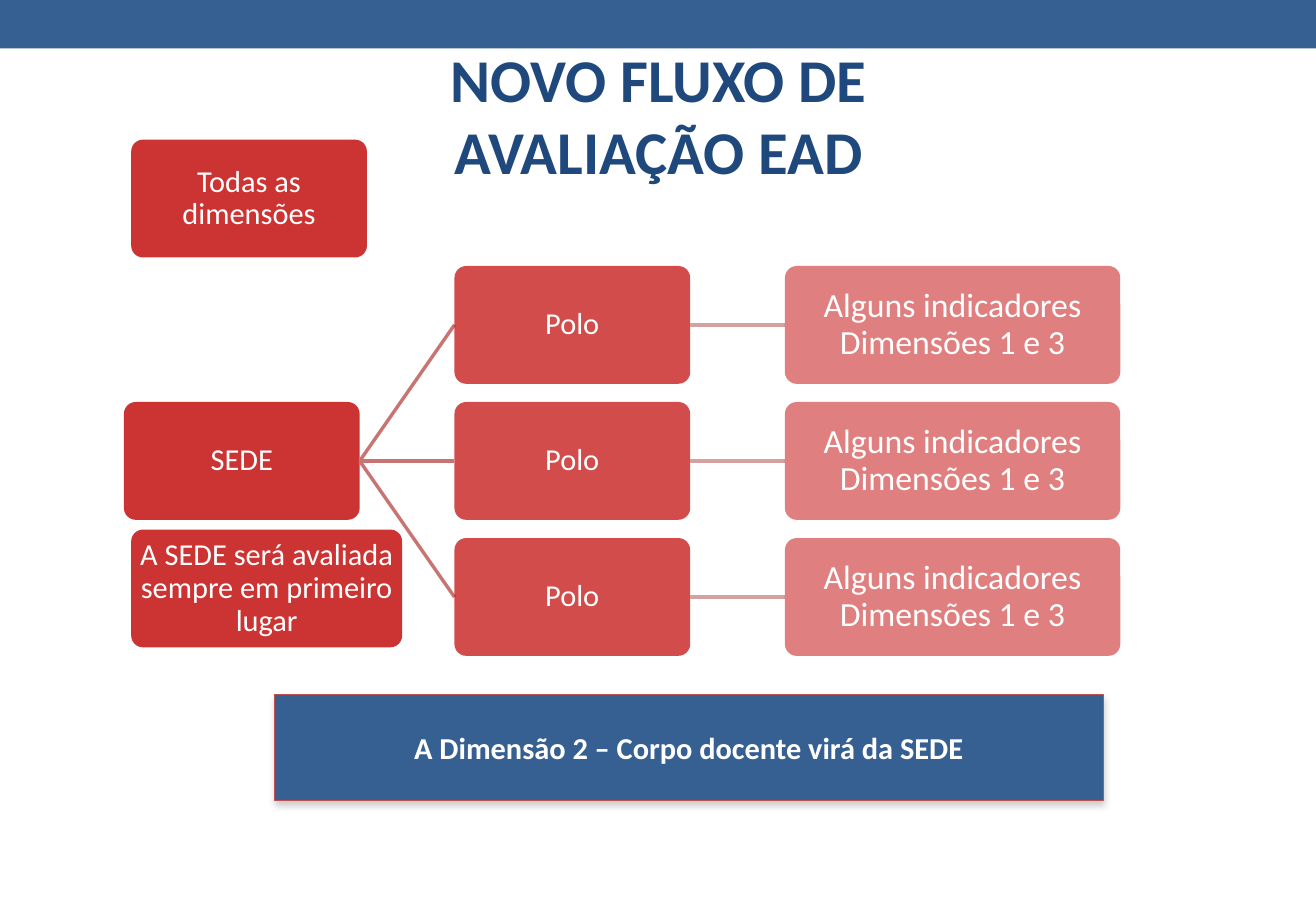
from lxml import etree
from pptx import Presentation
from pptx import util as u
from pptx.dml.color import RGBColor
from pptx.enum import shapes, text
from pptx.oxml.ns import qn

BLUE = RGBColor(0x37, 0x60, 0x92)
NAVY = RGBColor(0x1F, 0x49, 0x7D)
RED = RGBColor(0xC0, 0x00, 0x00)
EDGE = RGBColor(0xC0, 0x50, 0x4D)
ROSE = RGBColor(0xC7, 0x74, 0x72)
PINK = RGBColor(0xD5, 0xA1, 0xA0)
WHITE = RGBColor(0xFF, 0xFF, 0xFF)

HIGH = 0.97               # height of every red box
WIDE = 1.94               # width of the SEDE and Polo boxes
ROWS = [2.19 + 1.12 * i for i in range(3)]
SEDE, POLO, NOTE = 1.02, 3.74, 6.46   # left edges of the columns


def write(shape, words, size=18, bold=False, color=WHITE, space=None,
          inset=None, anchor=text.MSO_ANCHOR.MIDDLE):
    frame = shape.text_frame
    frame.word_wrap = True
    frame.auto_size = text.MSO_AUTO_SIZE.NONE
    frame.vertical_anchor = anchor
    if inset is not None:
        frame.margin_left = frame.margin_right = u.Inches(inset)
        frame.margin_top = frame.margin_bottom = u.Inches(inset)
    para = frame.paragraphs[0]
    para.text = words
    para.alignment = text.PP_ALIGN.CENTER
    if space:
        para.line_spacing = space
    font = para.font
    font.name, font.size, font.bold = "Calibri", u.Pt(size), bold
    font.color.rgb = color


def block(slide, kind, left, top, width, height, color):
    shape = slide.shapes.add_shape(kind, u.Inches(left), u.Inches(top),
                                   u.Inches(width), u.Inches(height))
    shape.shadow.inherit = False
    shape.fill.solid()
    shape.fill.fore_color.rgb = color
    shape.line.fill.background()
    return shape


def card(slide, words, left, top, width=WIDE, alpha=80, size=18):
    shape = block(slide, shapes.MSO_SHAPE.ROUNDED_RECTANGLE,
                  left, top, width, HIGH, RED)
    shape.adjustments[0] = 0.1
    tint = shape.element.spPr.find(qn("a:solidFill"))[0]
    etree.SubElement(tint, qn("a:alpha"), val=str(alpha * 1000))
    write(shape, words, size=size, space=0.9, inset=0.01)


def link(slide, left, top, right, low, color):
    line = slide.shapes.add_connector(
        shapes.MSO_CONNECTOR.STRAIGHT, u.Inches(left), u.Inches(top),
        u.Inches(right), u.Inches(low))
    line.line.color.rgb = color
    line.line.width = u.Pt(2)
    etree.SubElement(line.element.spPr, qn("a:effectLst"))


def banner(slide, words):
    shape = block(slide, shapes.MSO_SHAPE.RECTANGLE,
                  2.26, 5.72, 6.82, 0.87, BLUE)
    shape.line.color.rgb = EDGE
    shape.line.width = u.Pt(0.75)
    effect = shape.element.spPr.find(qn("a:effectLst"))
    shade = etree.SubElement(effect, qn("a:outerShdw"),
                             blurRad=str(u.Pt(4.1)), dist=str(u.Pt(2)),
                             dir="5400000", rotWithShape="0")
    gray = etree.SubElement(shade, qn("a:srgbClr"), val="808080")
    etree.SubElement(gray, qn("a:alpha"), val="40000")
    write(shape, words, bold=True)


def head(slide, words):
    title = slide.shapes.title
    title.left, title.top = u.Inches(2.71), u.Inches(0.29)
    title.width, title.height = u.Inches(5.42), u.Inches(1.31)
    write(title, words, size=36, bold=True, color=NAVY,
          anchor=text.MSO_ANCHOR.TOP)


def main():
    deck = Presentation()
    deck.slide_width, deck.slide_height = u.Inches(10.83), u.Inches(7.5)
    slide = deck.slides.add_slide(deck.slide_layouts[5])

    # Top bar and title
    block(slide, shapes.MSO_SHAPE.RECTANGLE, 0, 0, 10.83, 0.4, BLUE)
    head(slide, "NOVO FLUXO DE AVALIAÇÃO EAD")

    # Left column
    card(slide, "Todas as dimensões", 1.08, 1.15)
    card(slide, "A SEDE será avaliada sempre em primeiro lugar",
         1.08, 4.36, width=2.23)
    card(slide, "SEDE", SEDE, ROWS[1])

    # One branch per row
    hub = ROWS[1] + HIGH / 2
    for top in ROWS:
        mid = top + HIGH / 2
        link(slide, SEDE + WIDE, hub, POLO, mid, ROSE)
        card(slide, "Polo", POLO, top, alpha=70)
        link(slide, POLO + WIDE, mid, NOTE, mid, PINK)
        card(slide, "Alguns indicadores Dimensões 1 e 3", NOTE, top,
             width=2.76, alpha=50, size=20)

    # Closing message
    banner(slide, "A Dimensão 2 – Corpo docente virá da SEDE")
    deck.save("out.pptx")


if __name__ == "__main__":
    main()
